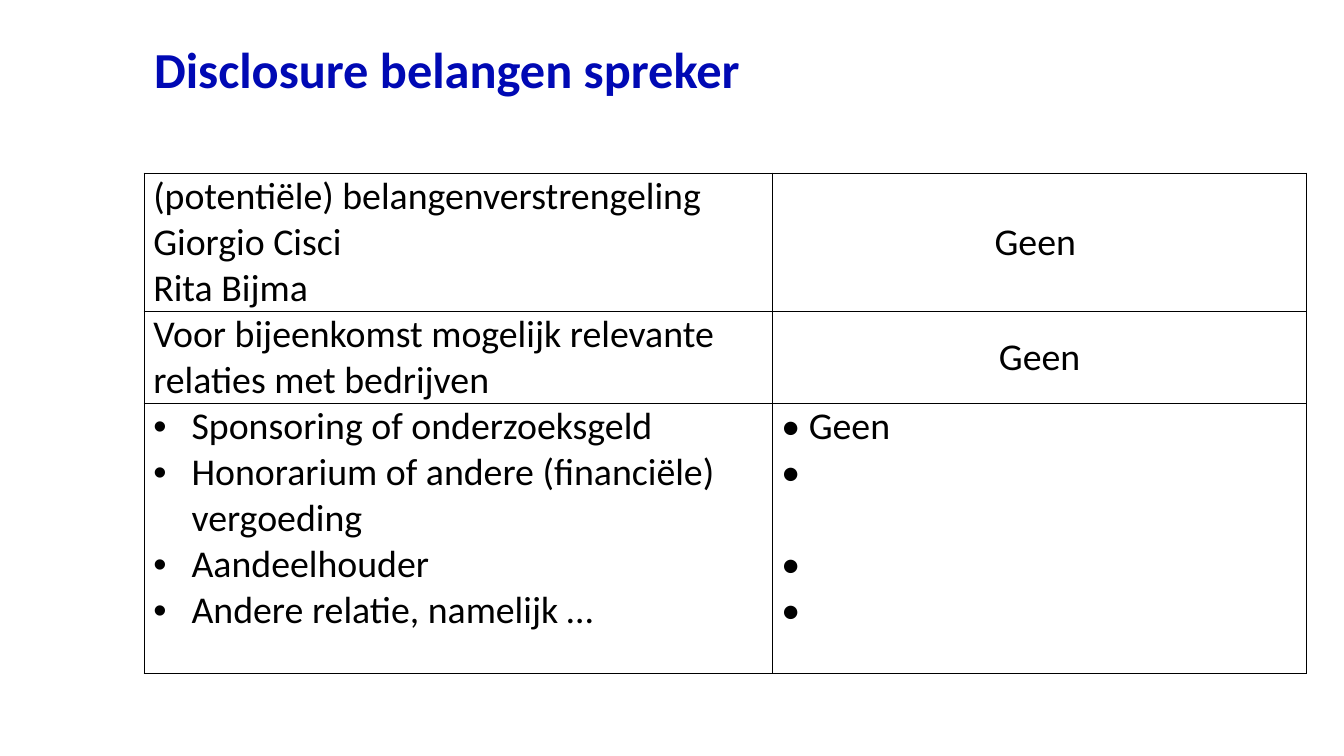
from lxml import etree
from pptx import Presentation
from pptx import util as u
from pptx.dml import color
from pptx.enum import text
from pptx.oxml import ns


def rgb(value):
    return color.RGBColor.from_string(value)


class DisclosureSlide:
    """Holds the style and the slide, on a grid of 100 columns by 100 rows."""

    font, ink, accent = "Calibri", "000000", "0009B4"
    body_size, title_size = 27, 36

    def __init__(self, presentation):
        self.column = presentation.slide_width / 100
        self.row = presentation.slide_height / 100
        self.slide = presentation.slides.add_slide(presentation.slide_layouts[6])

    def across(self, columns):
        return u.Emu(round(columns * self.column))

    def down(self, rows):
        return u.Emu(round(rows * self.row))

    def style(self, paragraph, size, ink, bold=False):
        for run in paragraph.runs:
            run.font.name = self.font
            run.font.size = u.Pt(size)
            run.font.bold = bold
            run.font.color.rgb = rgb(ink)

    def title(self, left, top, width, height, wording):
        box = self.slide.shapes.add_textbox(
            self.across(left), self.down(top), self.across(width), self.down(height))
        frame = box.text_frame
        frame.word_wrap = True
        frame.vertical_anchor = text.MSO_ANCHOR.MIDDLE
        frame.margin_top = frame.margin_bottom = 0
        frame.text = wording
        paragraph = frame.paragraphs[0]
        paragraph.line_spacing = 0.9
        self.style(paragraph, self.title_size, self.accent, bold=True)

    def table(self, left, top, widths, heights):
        table = self.slide.shapes.add_table(
            len(heights), len(widths), self.across(left), self.down(top),
            self.across(sum(widths)), self.down(sum(heights))).table
        table.first_row = table.horz_banding = False
        for column, width in zip(table.columns, widths):
            column.width = self.across(width)
        for row, height in zip(table.rows, heights):
            row.height = self.down(height)
        return table

    def cell(self, cell, wording, centred=False, middle=True, bulleted=False):
        cell.margin_left = cell.margin_right = u.Inches(0.09)
        cell.margin_top = cell.margin_bottom = 0
        cell.vertical_anchor = text.MSO_ANCHOR.MIDDLE if middle else text.MSO_ANCHOR.TOP
        self.borders(cell)
        cell.fill.background()
        cell.text_frame.text = wording
        for paragraph in cell.text_frame.paragraphs:
            if centred:
                paragraph.alignment = text.PP_ALIGN.CENTER
            if bulleted:
                self.bullet(paragraph)
            self.style(paragraph, self.body_size, self.ink)

    def borders(self, cell):
        properties = cell._tc.get_or_add_tcPr()
        for side in ("a:lnL", "a:lnR", "a:lnT", "a:lnB"):
            line = etree.SubElement(properties, ns.qn(side), w=str(u.Pt(1)))
            fill = etree.SubElement(line, ns.qn("a:solidFill"))
            etree.SubElement(fill, ns.qn("a:srgbClr"), val=self.ink)

    def bullet(self, paragraph):
        properties = paragraph._p.get_or_add_pPr()
        indent = u.Inches(0.38)
        properties.set("marL", str(indent))
        properties.set("indent", str(-indent))
        etree.SubElement(properties, ns.qn("a:buFont"), typeface="Arial")
        etree.SubElement(properties, ns.qn("a:buChar"), char="•")


def main():
    presentation = Presentation()
    presentation.slide_width = u.Inches(13.33)
    presentation.slide_height = u.Inches(7.5)
    page = DisclosureSlide(presentation)

    left = 10.73
    table = page.table(left, 22.93, widths=(46.74, 39.76), heights=(17.73, 11.87, 35.73))
    interests = (
        ("(potentiële) belangenverstrengeling\nGiorgio Cisci\nRita Bijma", "Geen "),
        ("Voor bijeenkomst mogelijk relevante relaties met bedrijven", "Geen"),
    )
    for index, (subject, answer) in enumerate(interests):
        page.cell(table.cell(index, 0), subject)
        page.cell(table.cell(index, 1), answer, centred=True)

    relations = (
        "Sponsoring of onderzoeksgeld",
        "Honorarium of andere (financiële) vergoeding",
        "Aandeelhouder",
        "Andere relatie, namelijk …",
    )
    page.cell(table.cell(2, 0), "\n".join(relations), middle=False, bulleted=True)
    answers = table.cell(2, 1)
    page.cell(answers, "• Geen\n•\n•\n•", middle=False)
    answers.text_frame.paragraphs[2].space_before = u.Pt(33)

    page.title(left, 6.33, 86.27, 6.53, "Disclosure belangen spreker")
    presentation.save("out.pptx")


if __name__ == "__main__":
    main()
